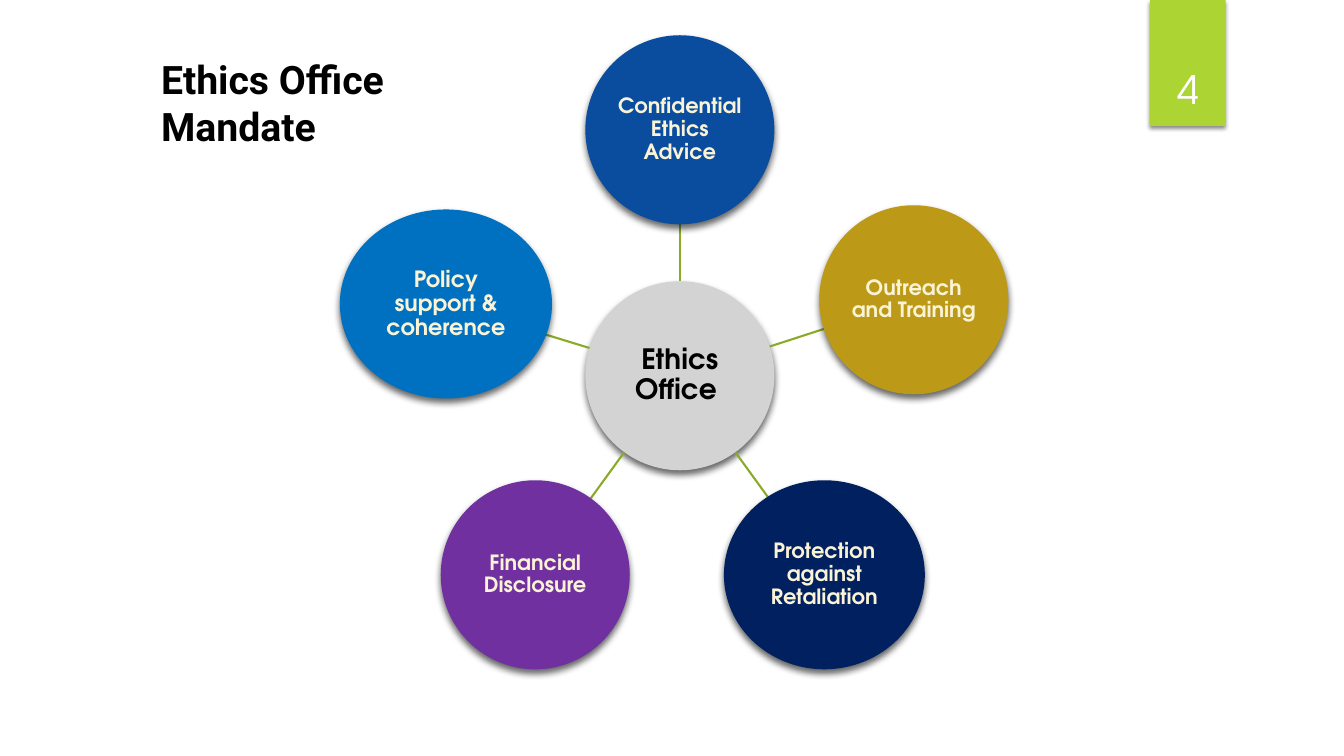
"""Build the Ethics Office mandate slide: a hub with five linked circles."""
import math
from lxml import etree
from pptx import Presentation, util as u
from pptx.dml.color import RGBColor
from pptx.enum import shapes, text
from pptx.oxml.ns import qn

FONT = "TeX Gyre Adventor"
CREAM = "FAF3D6"


def color(fmt, code):
    fmt.solid()
    fmt.fore_color.rgb = RGBColor.from_string(code)


def block(kind, x, y, w, h, fill, words, size, ink, shade):
    item = slide.shapes.add_shape(kind, u.Pt(x), u.Pt(y), u.Pt(w), u.Pt(h))
    color(item.fill, fill)
    item.line.fill.background()
    blur, dist, alpha = shade
    item.shadow.inherit = False
    glow = etree.SubElement(item._element.spPr.find(qn("a:effectLst")), qn("a:outerShdw"),
                            blurRad=str(u.Pt(blur)), dist=str(u.Pt(dist)),
                            dir="5400000", algn="ctr", rotWithShape="0")
    tint = etree.SubElement(glow, qn("a:srgbClr"), val="000000")
    etree.SubElement(tint, qn("a:alpha"), val=str(alpha * 1000))
    frame = item.text_frame
    frame.word_wrap = True
    frame.vertical_anchor = text.MSO_ANCHOR.MIDDLE
    frame.margin_left = frame.margin_right = u.Pt(0.7)
    frame.margin_top = frame.margin_bottom = u.Pt(0.7)
    para = frame.paragraphs[0]
    para.text = words
    para.alignment = text.PP_ALIGN.CENTER
    para.line_spacing = 0.9
    para.font.name, para.font.size, para.font.bold = FONT, u.Pt(size), True
    color(para.font.fill, ink)
    return item


deck = Presentation()
deck.slide_width, deck.slide_height = u.Pt(960), u.Pt(540)
slide = deck.slides.add_slide(deck.slide_layouts[6])

badge = block(shapes.MSO_SHAPE.RECTANGLE, 821.5, 0, 54, 90, "ACD433", "4", 28, "FFFFFF", (3, 2, 45))
badge.text_frame.vertical_anchor = text.MSO_ANCHOR.BOTTOM
badge.text_frame.margin_bottom = u.Pt(10)
badge.text_frame.paragraphs[0].font.bold = False
badge.text_frame.paragraphs[0].line_spacing = 1

MIDX, MIDY, SIZE, ORBIT = 485.6, 268.4, 135, 175.7
OVAL, SHADE = shapes.MSO_SHAPE.OVAL, (5, 3, 60)
block(OVAL, MIDX - SIZE / 2, MIDY - SIZE / 2, SIZE, SIZE,
      "D3D3D3", "Ethics Office ", 20, "000000", SHADE)

duties = [
    ("Confidential Ethics Advice", "0A4D9E", 135, 15, 0),
    ("Outreach and Training", "BC9A17", 135, 15, 0),
    ("Protection against Retaliation", "002060", 143.5, 15, 0),
    ("Financial Disclosure", "7030A0", 135, 15, 0),
    ("Policy support & coherence", "0070C0", 151.5, 16, 3),
]
for spot, (words, fill, wide, size, drop) in enumerate(duties):
    turn = math.radians(72 * spot - 90)
    dx, dy = ORBIT * math.cos(turn), ORBIT * math.sin(turn) + drop
    span = math.hypot(dx, dy)
    ux, uy = dx / span, dy / span
    near = SIZE / 2
    far = span - 1 / math.hypot(ux / (wide / 2), uy / (SIZE / 2))
    link = slide.shapes.add_connector(
        shapes.MSO_CONNECTOR.STRAIGHT,
        u.Pt(MIDX + near * ux), u.Pt(MIDY + near * uy),
        u.Pt(MIDX + far * ux), u.Pt(MIDY + far * uy))
    color(link.line.fill, "8AAA29")
    link.line.width = u.Pt(1.5)
    etree.SubElement(link._element.spPr, qn("a:effectLst"))
    block(OVAL, MIDX + dx - wide / 2, MIDY + dy - SIZE / 2, wide, SIZE,
          fill, words, size, CREAM, SHADE)

title = slide.shapes.add_textbox(u.Pt(108), u.Pt(36), u.Pt(200), u.Pt(75))
title.text_frame.word_wrap = True
head = title.text_frame.paragraphs[0]
head.text = "Ethics Office Mandate"
head.font.name, head.font.size, head.font.bold = "Roboto", u.Pt(28), True
color(head.font.fill, "000000")

deck.save("out.pptx")
